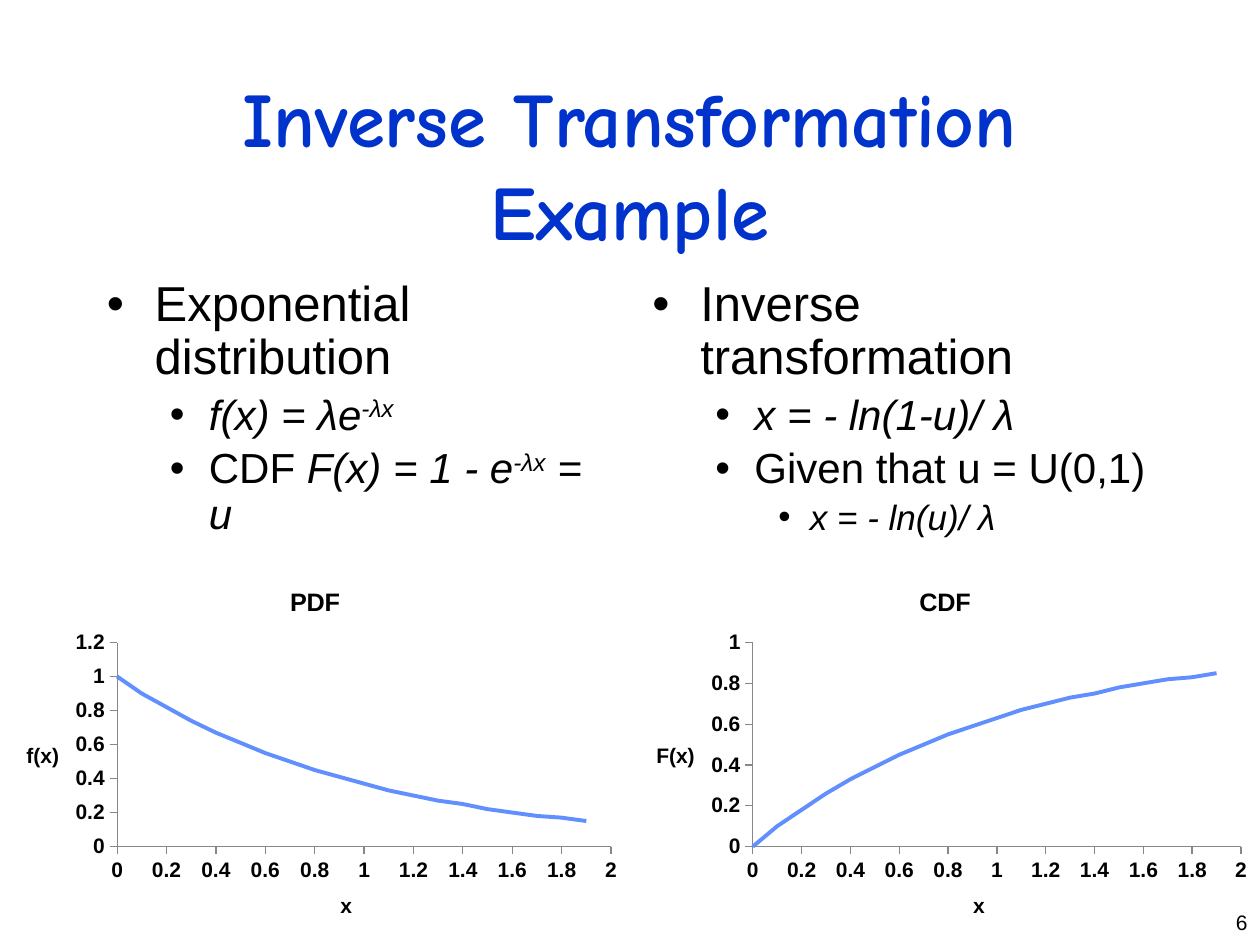
from math import exp

from lxml import etree
from pptx import Presentation
from pptx.chart.data import XyChartData
from pptx.dml.color import RGBColor
from pptx.enum.chart import XL_CHART_TYPE, XL_TICK_MARK
from pptx.enum.text import MSO_ANCHOR, MSO_AUTO_SIZE, PP_ALIGN
from pptx.oxml import parse_xml
from pptx.oxml.ns import nsdecls, qn
from pptx.util import Inches, Pt

LINES = XL_CHART_TYPE.XY_SCATTER_LINES_NO_MARKERS
OUTSIDE = XL_TICK_MARK.OUTSIDE
NO_TICK = XL_TICK_MARK.NONE
MIDDLE = MSO_ANCHOR.MIDDLE
NO_FIT = MSO_AUTO_SIZE.NONE
CENTER, RIGHT = PP_ALIGN.CENTER, PP_ALIGN.RIGHT

TITLE = "Inverse Transformation Example"
PAGE_NUMBER = "6"
BLACK, BLUE, CURVE, GREY = "000000", "0033CC", "618FFD", "878787"

LEVELS = [(28, 0.38, 0.38), (24, 0.81, 0.31), (20, 1.25, 0.25)]
ITALIC = {"italic": True}
SUPER = {"italic": True, "baseline": 30000}
COLUMNS = [
    (0.75, [
        (0, [("Exponential distribution", {})]),
        (1, [("f(x) = λe", ITALIC), ("-λx", SUPER)]),
        (1, [("CDF ", {}), ("F(x) = 1 - e", ITALIC), ("-λx", SUPER), (" = u", ITALIC)]),
    ]),
    (5.08, [
        (0, [("Inverse transformation", {})]),
        (1, [("x = - ln(1-u)/ λ", ITALIC)]),
        (1, [("Given that u = U(0,1)", {})]),
        (2, [("x = - ln(u)/ λ", ITALIC)]),
    ]),
]

X_VALUES = [step / 10 for step in range(20)]
CHARTS = [
    {"title": "PDF", "axis": "f(x)", "left": 0, "max": 1.2,
     "plot": (0.186, 0.2, 0.784, 0.54),
     "values": [round(exp(-x), 2) for x in X_VALUES]},
    {"title": "CDF", "axis": "F(x)", "left": 5, "max": 1,
     "plot": (0.195, 0.2, 0.775, 0.54),
     "values": [round(1 - exp(-x), 2) for x in X_VALUES]},
]


def color(hex_value):
    return RGBColor.from_string(hex_value)


def add_text(paragraph, text, size=12, font="Arial", fill=BLACK,
             bold=False, italic=False, baseline=0):
    run = paragraph.add_run()
    run.text = text
    run.font.size = Pt(size)
    run.font.name = font
    run.font.bold = bold
    run.font.italic = italic
    run.font.color.rgb = color(fill)
    if baseline:
        run.font._element.set("baseline", str(baseline))


def add_box(slide, left, top, width, height):
    frame = slide.shapes.add_textbox(
        Inches(left), Inches(top), Inches(width), Inches(height)).text_frame
    frame.word_wrap = True
    return frame


def add_bullets(slide, left, items):
    frame = add_box(slide, left, 2.17, 4.17, 4.5)
    for index, (level, runs) in enumerate(items):
        paragraph = frame.add_paragraph() if index else frame.paragraphs[0]
        size, margin, hanging = LEVELS[level]
        paragraph.level = level
        paragraph.line_spacing = 0.9
        paragraph.space_before = Pt(size * 0.2)
        properties = paragraph._p.get_or_add_pPr()
        properties.set("marL", str(Inches(margin)))
        properties.set("indent", str(-Inches(hanging)))
        etree.SubElement(properties, qn("a:buFont"), typeface="Arial")
        etree.SubElement(properties, qn("a:buChar"), char="•")
        for text, style in runs:
            add_text(paragraph, text, size=size, **style)


def format_axis(axis, title, maximum):
    axis.minimum_scale, axis.maximum_scale, axis.major_unit = 0, maximum, 0.2
    axis.has_major_gridlines = False
    axis.major_tick_mark, axis.minor_tick_mark = OUTSIDE, NO_TICK
    axis.tick_labels.number_format = "General"
    axis.tick_labels.number_format_is_linked = False
    axis.format.line.color.rgb = color(GREY)
    axis.format.line.width = Pt(0.75)
    frame = axis.axis_title.text_frame
    add_text(frame.paragraphs[0], title, bold=True)
    frame._txBody.bodyPr.set("rot", "0")
    frame._txBody.bodyPr.set("vert", "horz")


def place_plot(chart, fractions):
    plot_area = chart._chartSpace.chart.plotArea
    for layout in plot_area.findall(qn("c:layout")):
        plot_area.remove(layout)
    sizes = "".join(f'<c:{key} val="{value}"/>' for key, value in zip("xywh", fractions))
    plot_area.insert(0, parse_xml(
        f'<c:layout {nsdecls("c")}><c:manualLayout><c:layoutTarget val="inner"/>'
        '<c:xMode val="edge"/><c:yMode val="edge"/>'
        f'{sizes}</c:manualLayout></c:layout>'))


def add_curve(slide, curve):
    data = XyChartData()
    points = data.add_series("Series 1")
    for x, y in zip(X_VALUES, curve["values"]):
        points.add_data_point(x, y)
    chart = slide.shapes.add_chart(
        LINES, Inches(curve["left"]), Inches(4.5), Inches(5), Inches(3), data).chart
    chart.font.size = Pt(12)
    chart.font.name = "Arial"
    chart.font.bold = True
    chart.font.color.rgb = color(BLACK)
    chart.has_legend = False
    chart.has_title = True
    add_text(chart.chart_title.text_frame.paragraphs[0], curve["title"], size=14.4, bold=True)
    chart.plots[0].vary_by_categories = False
    series = chart.plots[0].series[0]
    series.smooth = False
    series.format.line.color.rgb = color(CURVE)
    series.format.line.width = Pt(2.25)
    format_axis(chart.category_axis, "x", 2)
    format_axis(chart.value_axis, curve["axis"], curve["max"])
    place_plot(chart, curve["plot"])


def main():
    deck = Presentation()
    deck.slide_width, deck.slide_height = Inches(10), Inches(7.5)
    slide = deck.slides.add_slide(deck.slide_layouts[5])

    title = slide.shapes.title
    title.left, title.top = Inches(0.75), Inches(0.67)
    title.width, title.height = Inches(8.5), Inches(1.25)
    title.text_frame.auto_size = NO_FIT
    title.text_frame.vertical_anchor = MIDDLE
    heading = title.text_frame.paragraphs[0]
    heading.alignment = CENTER
    add_text(heading, TITLE, size=44, font="Comic Neue", fill=BLUE, bold=True)

    for left, items in COLUMNS:
        add_bullets(slide, left, items)

    number = add_box(slide, 9.25, 7.17, 0.75, 0.33).paragraphs[0]
    number.alignment = RIGHT
    add_text(number, PAGE_NUMBER)

    for curve in CHARTS:
        add_curve(slide, curve)

    deck.save("out.pptx")


if __name__ == "__main__":
    main()
